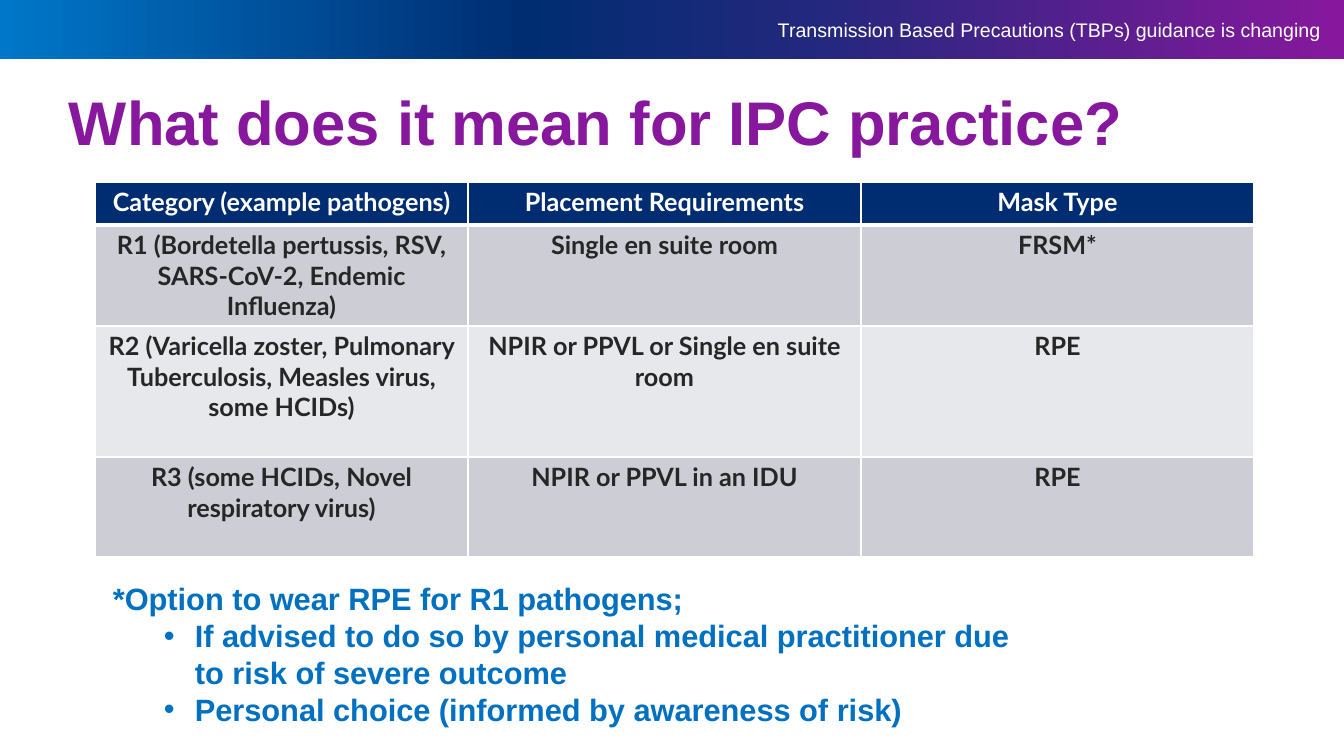
from lxml import etree
from pptx import Presentation
from pptx import util as u
from pptx.dml.color import RGBColor
from pptx.enum import shapes, text
from pptx.oxml import parse_xml
from pptx.oxml.ns import nsdecls, qn

EMU_PER_PX = 914400 / 100.8
COLORS = {
    "white": "FFFFFF", "sky": "0077C8", "navy": "002D72", "indigo": "22287D",
    "purple": "87189D", "ink": "262626", "note": "0070C0",
    "band_dark": "CCCDD5", "band_light": "E7E8EB",
}
BANNER_STOPS = [(0, "sky"), (39, "navy"), (60, "indigo"), (100, "purple")]
COLUMN_WIDTHS = [373, 393, 393]
ROW_HEIGHTS = [43, 101, 131, 100]
PRECAUTIONS = [
    ["Category (example pathogens)", "Placement Requirements", "Mask Type"],
    ["R1 (Bordetella pertussis, RSV, SARS-CoV-2, Endemic Influenza)",
     "Single en suite room", "FRSM*"],
    ["R2 (Varicella zoster, Pulmonary Tuberculosis, Measles virus, some HCIDs)",
     "NPIR or PPVL or Single en suite room", "RPE"],
    ["R3 (some HCIDs, Novel respiratory virus)", "NPIR or PPVL in an IDU", "RPE"],
]
NOTE_LEAD = "*Option to wear RPE for R1 pathogens;"
NOTE_BULLETS = [
    "If advised to do so by personal medical practitioner due to risk of severe outcome",
    "Personal choice (informed by awareness of risk)",
]


def px(length):
    return u.Emu(round(length * EMU_PER_PX))


def color(name):
    return RGBColor.from_string(COLORS[name])


def write(paragraph, words, size, color_name, bold=True, font="Arial"):
    paragraph.text = words
    for run in paragraph.runs:
        run.font.name = font
        run.font.size = u.Pt(size)
        run.font.bold = bold
        run.font.color.rgb = color(color_name)


def add_text_frame(slide, left, top, width, height):
    box = slide.shapes.add_textbox(px(left), px(top), px(width), px(height))
    box.text_frame.word_wrap = True
    return box.text_frame


def add_banner(slide, left, top, width, height):
    banner = slide.shapes.add_shape(
        shapes.MSO_SHAPE.RECTANGLE, px(left), px(top), px(width), px(height))
    banner.shadow.inherit = False
    banner.line.fill.background()
    banner.fill.gradient()
    banner.fill.gradient_angle = 0
    # Four colour stops
    stops = banner._element.spPr.find(".//" + qn("a:gsLst"))
    for stop in list(stops):
        stops.remove(stop)
    for percent, name in BANNER_STOPS:
        stop = etree.SubElement(stops, qn("a:gs"), pos=str(percent * 1000))
        etree.SubElement(stop, qn("a:srgbClr"), val=COLORS[name])
    # Running header
    frame = add_text_frame(slide, left + 55, top + 13, width - 68, 34)
    paragraph = frame.paragraphs[0]
    write(paragraph, "Transmission Based Precautions (TBPs) guidance is changing",
          14, "white", bold=False)
    paragraph.alignment = text.PP_ALIGN.RIGHT


def add_title(slide, left, top, width, height):
    frame = add_text_frame(slide, left, top, width, height)
    frame.margin_top = px(9)
    paragraph = frame.paragraphs[0]
    write(paragraph, "What does it mean for IPC practice?", 44, "purple")
    paragraph.line_spacing = 0.9


def set_borders(cell, widths):
    properties = cell._tc.get_or_add_tcPr()
    for side, points in zip("LRTB", widths):
        properties.append(parse_xml(
            f'<a:ln{side} {nsdecls("a")} w="{u.Pt(points)}"><a:solidFill>'
            f'<a:srgbClr val="{COLORS["white"]}"/></a:solidFill></a:ln{side}>'))


def add_precautions_table(slide, left, top):
    table = slide.shapes.add_table(
        len(ROW_HEIGHTS), len(COLUMN_WIDTHS), px(left), px(top),
        px(sum(COLUMN_WIDTHS)), px(sum(ROW_HEIGHTS))).table
    for column, width in zip(table.columns, COLUMN_WIDTHS):
        column.width = px(width)
    for row, height in zip(table.rows, ROW_HEIGHTS):
        row.height = px(height)
    for row_index, labels in enumerate(PRECAUTIONS):
        is_header = row_index == 0
        band = "band_dark" if row_index % 2 else "band_light"
        for column_index, label in enumerate(labels):
            cell = table.cell(row_index, column_index)
            set_borders(cell, (1, 1, 3 if row_index == 1 else 1, 3 if is_header else 1))
            cell.fill.solid()
            cell.fill.fore_color.rgb = color("navy" if is_header else band)
            paragraph = cell.text_frame.paragraphs[0]
            write(paragraph, label, 18, "white" if is_header else "ink", font="Lato")
            paragraph.alignment = text.PP_ALIGN.CENTER


def add_note(slide, left, top, width, height):
    frame = add_text_frame(slide, left, top, width, height)
    write(frame.paragraphs[0], NOTE_LEAD, 22, "note")
    for words in NOTE_BULLETS:
        paragraph = frame.add_paragraph()
        paragraph.level = 1
        properties = paragraph._p.get_or_add_pPr()
        properties.set("marL", str(px(82)))
        properties.set("indent", str(px(-31)))
        etree.SubElement(properties, qn("a:buFont"), typeface="Arial")
        etree.SubElement(properties, qn("a:buChar"), char="•")
        write(paragraph, words, 22, "note")


def main():
    presentation = Presentation()
    presentation.slide_width = px(1344)
    presentation.slide_height = px(756)
    slide = presentation.slides.add_slide(presentation.slide_layouts[6])
    add_banner(slide, 0, 0, 1344, 59)
    add_title(slide, 59, 83, 1159, 99)
    add_precautions_table(slide, 95, 182)
    add_note(slide, 103, 575, 933, 159)
    presentation.save("out.pptx")


if __name__ == "__main__":
    main()
